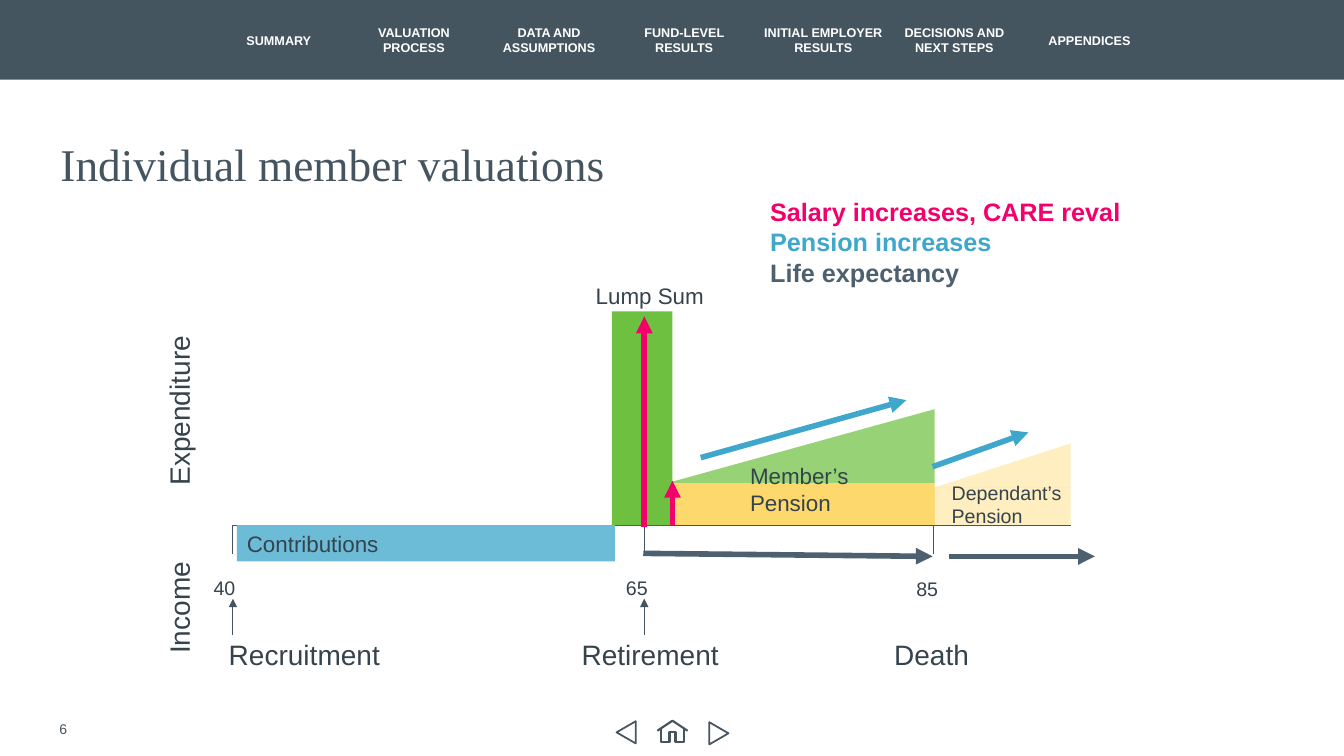
from pptx import Presentation
from pptx.dml.color import RGBColor
from pptx.enum.shapes import MSO_CONNECTOR, MSO_SHAPE
from pptx.enum.text import MSO_ANCHOR, PP_ALIGN
from pptx.oxml.ns import qn
from pptx.util import Inches, Pt
from lxml import etree

RECT, RIGHT_TRIANGLE = MSO_SHAPE.RECTANGLE, MSO_SHAPE.RIGHT_TRIANGLE
TRIANGLE = MSO_SHAPE.ISOSCELES_TRIANGLE
STRAIGHT = MSO_CONNECTOR.STRAIGHT
TOP, MIDDLE = MSO_ANCHOR.TOP, MSO_ANCHOR.MIDDLE
LEFT, CENTER = PP_ALIGN.LEFT, PP_ALIGN.CENTER

SLATE, INK, STEEL = "455560", "35434D", "4D606F"
WHITE, PINK, BLUE, PALE_BLUE = "FFFFFF", "F2016C", "3FA6CC", "6CBCD8"
YELLOW, GREEN, LIGHT_GREEN = "FDC82F", "6EC040", "97D276"
BODY_FONT, TITLE_FONT = "Arial", "Times New Roman"


def rgb(color):
    return RGBColor.from_string(color)


class SlideBuilder:
    def __init__(self, slide):
        self.slide = slide
        self.shapes = slide.shapes

    def set_text(self, frame, lines, size, colors, bold=False, font=BODY_FONT,
                 align=LEFT, anchor=TOP, insets=(0.1, 0.05)):
        """Fill a frame with one paragraph per line, each in its own colour."""
        frame.text = "\n".join(lines)
        frame.word_wrap = True
        frame.vertical_anchor = anchor
        frame.margin_left = frame.margin_right = Inches(insets[0])
        frame.margin_top = frame.margin_bottom = Inches(insets[1])
        for paragraph, color in zip(frame.paragraphs, colors):
            paragraph.alignment = align
            for run in paragraph.runs:
                run.font.name = font
                run.font.size = Pt(size)
                run.font.bold = bold
                run.font.color.rgb = rgb(color)

    def title(self, text, box):
        title = self.shapes.title
        title.left, title.top, title.width, title.height = map(Inches, box)
        self.set_text(title.text_frame, [text], 32.4, [SLATE], font=TITLE_FONT,
                      anchor=MIDDLE, insets=(0, 0))
        title.text_frame.paragraphs[0].line_spacing = 0.9

    def label(self, text, box, size, color=INK, rotation=0, **style):
        label = self.shapes.add_textbox(*map(Inches, box))
        label.rotation = rotation
        lines = text.split("\n")
        colors = color if isinstance(color, list) else [color] * len(lines)
        self.set_text(label.text_frame, lines, size, colors, **style)

    def block(self, kind, box, fill, opacity=100, outline=None, rotation=0, mirrored=False):
        block = self.shapes.add_shape(kind, *map(Inches, box))
        block.shadow.inherit = False
        block.rotation = rotation
        block.fill.solid()
        block.fill.fore_color.rgb = rgb(fill)
        if opacity < 100:
            tint = block._element.spPr.find(qn("a:solidFill"))[0]
            etree.SubElement(tint, qn("a:alpha")).set("val", str(opacity * 1000))
        if outline:
            block.line.color.rgb = rgb(outline)
            block.line.width = Pt(1.25)
        else:
            block.line.fill.background()
        if mirrored:
            block._element.spPr.find(qn("a:xfrm")).set("flipH", "1")
        return block

    def line(self, start, end, color=SLATE, width=0.75, arrow=False):
        line = self.shapes.add_connector(STRAIGHT, *map(Inches, start + end))
        line.line.color.rgb = rgb(color)
        line.line.width = Pt(width)
        properties = line._element.spPr
        if arrow:
            head = etree.SubElement(properties.find(qn("a:ln")), qn("a:tailEnd"))
            head.set("type", "triangle")
        etree.SubElement(properties, qn("a:effectLst"))

    def stroke(self, points):
        """Draw an open outline through the points."""
        first, *rest = [tuple(map(Inches, point)) for point in points]
        builder = self.shapes.build_freeform(*first)
        builder.add_line_segments(rest, close=False)
        outline = builder.convert_to_shape()
        outline.shadow.inherit = False
        outline.fill.background()
        outline.line.color.rgb = rgb(SLATE)
        outline.line.width = Pt(1.5)


def add_navigation(page):
    page.block(RECT, (0, 0, 13.33, 0.79), SLATE)
    sections = ["SUMMARY", "VALUATION PROCESS", "DATA AND ASSUMPTIONS", "FUND-LEVEL RESULTS",
                "INITIAL EMPLOYER RESULTS", "DECISIONS AND NEXT STEPS", "APPENDICES"]
    for i, section in enumerate(sections):
        width = 1.27 if section.startswith("INITIAL") else 1.19
        page.label(section, (2.17 + 1.34 * i, 0.18, width, 0.44), 9, WHITE, bold=True,
                   align=CENTER, anchor=MIDDLE, insets=(0.04, 0))

    page.label("6", (0.49, 7.03, 2.25, 0.4), 10, SLATE, anchor=MIDDLE)
    page.stroke([(6.56, 7.23), (6.56, 7.36), (6.64, 7.36), (6.64, 7.26),
                 (6.7, 7.26), (6.7, 7.36), (6.78, 7.36), (6.78, 7.23)])
    page.stroke([(6.52, 7.25), (6.67, 7.15), (6.82, 7.25)])
    page.block(TRIANGLE, (6.1, 7.17, 0.22, 0.19), WHITE, outline=SLATE, rotation=270)
    page.block(TRIANGLE, (7.02, 7.18, 0.22, 0.19), WHITE, outline=SLATE, rotation=90)


def add_cash_flows(page):
    axis, tick_end = 5.21, 5.5
    recruitment, retirement, death, end = 2.31, 6.39, 9.26, 10.62

    page.block(RECT, (death, 4.84, 1.36, 0.37), YELLOW, opacity=30)
    page.block(RIGHT_TRIANGLE, (death, 4.4, 1.36, 0.44), YELLOW, opacity=30, mirrored=True)
    page.block(RECT, (6.63, 4.77, 2.64, 0.44), YELLOW, opacity=70)
    page.block(RIGHT_TRIANGLE, (6.63, 4.06, 2.64, 0.73), LIGHT_GREEN, mirrored=True)
    page.line((recruitment, axis), (end, axis))
    for age in (recruitment, retirement, death):
        page.line((age, axis), (age, tick_end))
    page.block(RECT, (6.07, 3.09, 0.6, 2.12), GREEN)
    contributions = page.block(RECT, (2.35, axis, 3.75, 0.36), PALE_BLUE)
    page.set_text(contributions.text_frame, ["Contributions"], 16, [INK], anchor=MIDDLE)

    for text, box, size in [
        ("Lump Sum", (5.81, 2.75, 1.92, 0.34), 16),
        ("Dependant’s\nPension", (9.34, 4.72, 1.37, 0.53), 14),
        ("Member’s Pension", (7.34, 4.54, 1.92, 0.59), 16),
        ("40", (2.02, 5.66, 0.56, 0.31), 14),
        ("65", (6.11, 5.66, 0.56, 0.31), 14),
        ("85", (8.99, 5.67, 0.56, 0.31), 14),
        ("Recruitment", (2.17, 6.27, 1.82, 0.41), 20),
        ("Retirement", (5.67, 6.27, 1.67, 0.41), 20),
        ("Death", (8.77, 6.28, 1.44, 0.41), 20),
    ]:
        page.label(text, box, size)
    for text, top in (("Expenditure", 3.82), ("Income", 5.49)):
        page.label(text, (0.9, top, 1.75, 0.44), 20, rotation=270)
    for event in (recruitment, retirement):
        page.line((event, 6.3), (event, 5.94), arrow=True)


def add_assumptions(page):
    page.label("Salary increases, CARE reval\nPension increases\nLife expectancy",
               (7.54, 1.9, 4.02, 1.5), 18, [PINK, BLUE, STEEL], bold=True)
    for start, tip, color in [
        ((6.39, 5.23), (6.39, 3.14), PINK),
        ((6.67, 5.21), (6.67, 4.77), PINK),
        ((6.95, 4.54), (8.99, 3.97), BLUE),
        ((9.25, 4.63), (10.2, 4.29), BLUE),
        ((6.38, 5.49), (9.25, 5.52), STEEL),
        ((9.41, 5.52), (10.86, 5.52), STEEL),
    ]:
        page.line(start, tip, color, 4, arrow=True)


def main():
    deck = Presentation()
    deck.slide_width, deck.slide_height = Inches(13.33), Inches(7.5)
    page = SlideBuilder(deck.slides.add_slide(deck.slide_layouts[5]))
    add_navigation(page)
    page.title("Individual member valuations", (0.6, 1.4, 12.13, 0.5))
    add_cash_flows(page)
    add_assumptions(page)
    deck.save("out.pptx")


if __name__ == "__main__":
    main()
